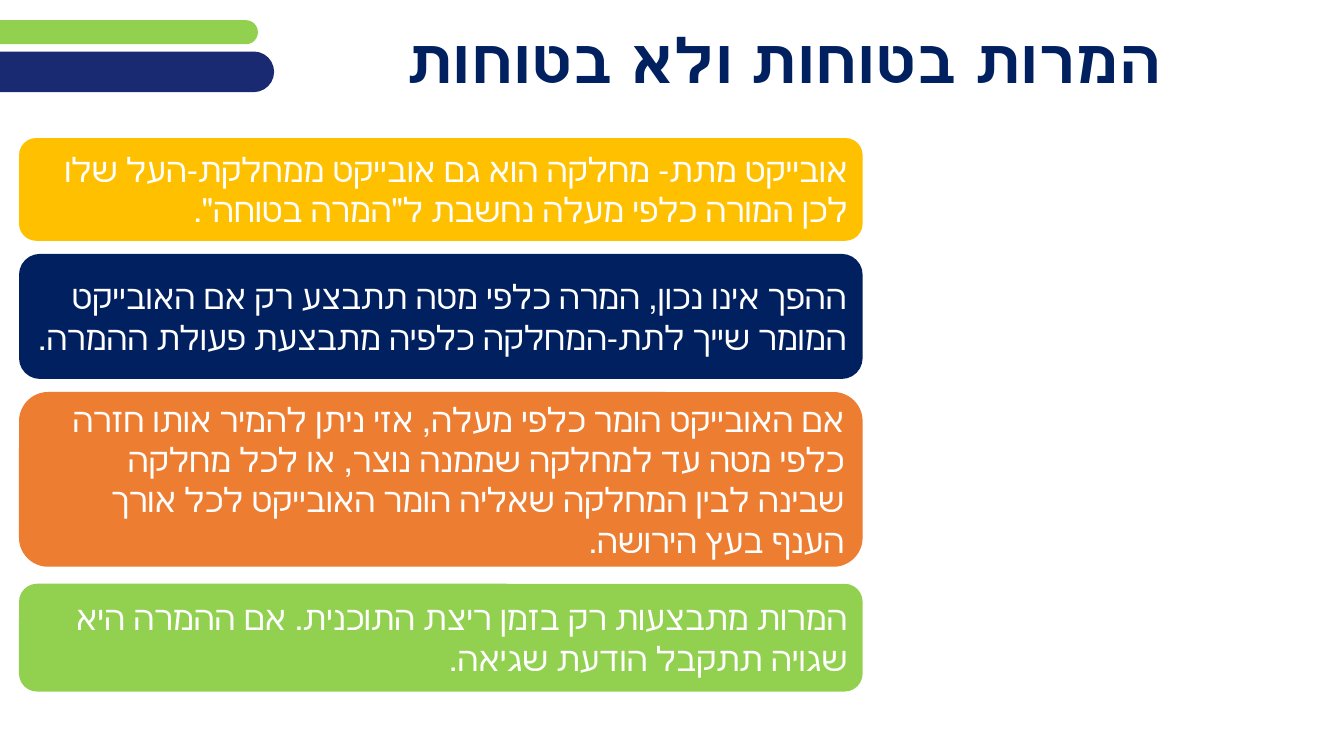
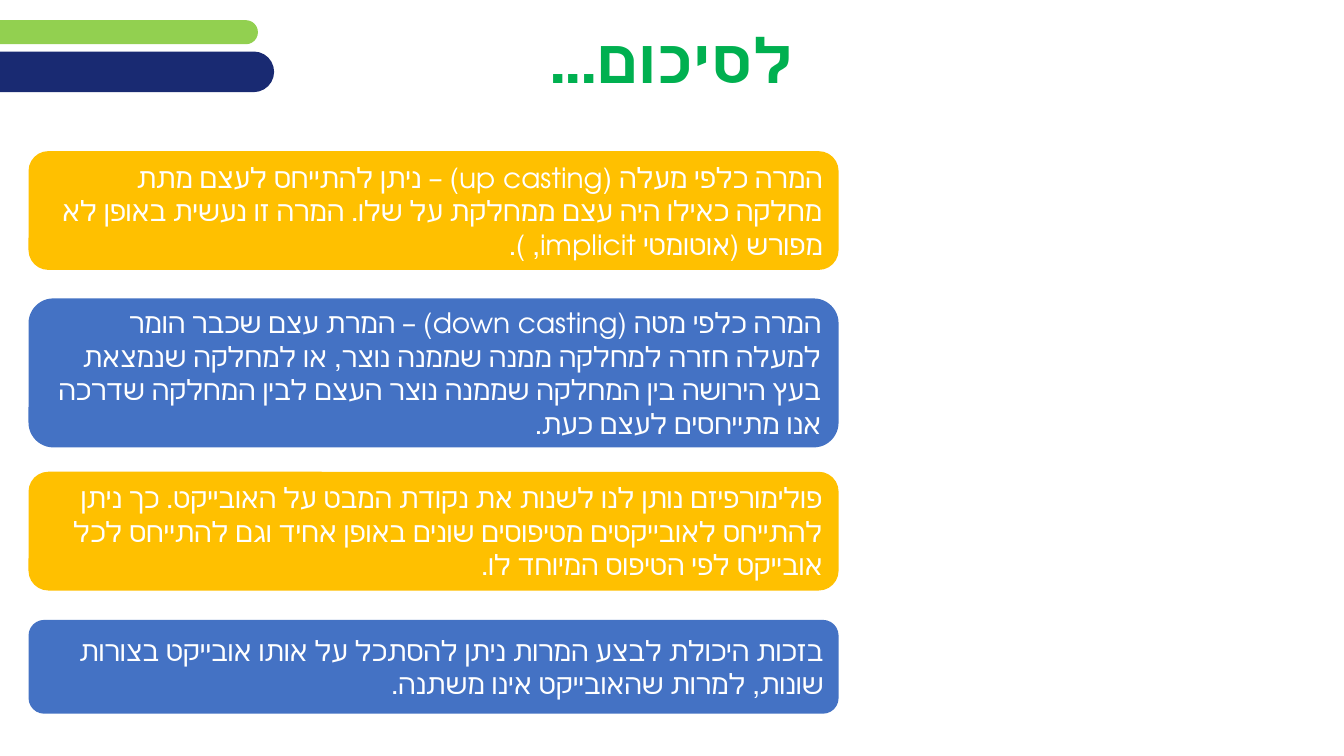
from dataclasses import dataclass

from pptx import Presentation
from pptx.dml.color import RGBColor
from pptx.enum import shapes, text
from pptx.util import Pt

FONT = "TeX Gyre Adventor"
WHITE, NAVY, INDIGO = "FFFFFF", "002060", "192A72"
LIME, GREEN, AMBER, ORANGE, BLUE = "92D050", "00B050", "FFC000", "ED7D31", "4472C4"
SLIDE_W, SLIDE_H = 960, 540
RIGHT, CENTER = text.PP_ALIGN.RIGHT, text.PP_ALIGN.CENTER
ROUND = shapes.MSO_SHAPE.ROUNDED_RECTANGLE
CARD = shapes.MSO_SHAPE.FLOWCHART_ALTERNATE_PROCESS


@dataclass
class Card:
    top: float
    height: float
    color: str
    text: str


@dataclass
class Page:
    title: str
    title_color: str
    title_align: text.PP_ALIGN
    title_indent: float
    card_left: float
    card_width: float
    card_size: float
    cards: list[Card]


PAGES = [
    Page("המרות בטוחות ולא בטוחות", NAVY, RIGHT, 130, 13.6, 602.6, 24, [
        Card(98.6, 73.4, AMBER, "אובייקט מתת- מחלקה הוא גם אובייקט ממחלקת-העל שלו לכן המורה "
             "כלפי מעלה נחשבת ל\"המרה בטוחה\"."),
        Card(181.4, 89.3, NAVY, "ההפך אינו נכון, המרה כלפי מטה תתבצע רק אם האובייקט המומר "
             "שייך לתת-המחלקה כלפיה מתבצעת פעולת ההמרה."),
        Card(280, 124.8, ORANGE, "אם האובייקט הומר כלפי מעלה, אזי ניתן להמיר אותו חזרה כלפי "
             "מטה עד למחלקה שממנה נוצר, או לכל מחלקה שבינה לבין המחלקה שאליה הומר "
             "האובייקט לכל אורך הענף בעץ הירושה."),
        Card(417, 77, LIME, "המרות מתבצעות רק בזמן ריצת התוכנית. אם ההמרה היא שגויה "
             "תתקבל הודעת שגיאה."),
    ]),
    Page("לסיכום...", GREEN, CENTER, 7.2, 20.4, 578.6, 20, [
        Card(108, 84.8, AMBER, "המרה כלפי מעלה (up casting) – ניתן להתייחס לעצם מתת מחלקה "
             "כאילו היה עצם ממחלקת על שלו. המרה זו נעשית באופן לא מפורש "
             "(אוטומטי implicit, )."),
        Card(213.2, 106.4, BLUE, "המרה כלפי מטה (down casting) – המרת עצם שכבר הומר למעלה "
             "חזרה למחלקה ממנה שממנה נוצר, או למחלקה שנמצאת בעץ הירושה בין המחלקה "
             "שממנה נוצר העצם לבין המחלקה שדרכה אנו מתייחסים לעצם כעת."),
        Card(337, 84.8, AMBER, "פולימורפיזם נותן לנו לשנות את נקודת המבט על האובייקט. כך "
             "ניתן להתייחס לאובייקטים מטיפוסים שונים באופן אחיד וגם להתייחס לכל "
             "אובייקט לפי הטיפוס המיוחד לו."),
        Card(442.8, 67, BLUE, "בזכות היכולת לבצע המרות ניתן להסתכל על אותו אובייקט בצורות "
             "שונות, למרות שהאובייקט אינו משתנה."),
    ]),
]


def rgb(color: str) -> RGBColor:
    return RGBColor.from_string(color)


def add_block(slide, kind, left: float, top: float, width: float, height: float, color: str):
    sp = slide.shapes.add_shape(kind, Pt(left), Pt(top), Pt(width), Pt(height))
    sp.shadow.inherit = False
    sp.fill.solid()
    sp.fill.fore_color.rgb = rgb(color)
    sp.line.fill.background()
    return sp


def write(sp, content: str, *, size: float, color: str, bold: bool = False,
          align: text.PP_ALIGN = RIGHT) -> None:
    """Set one right-to-left paragraph, vertically centred."""
    tf = sp.text_frame
    tf.word_wrap = True
    tf.vertical_anchor = text.MSO_ANCHOR.MIDDLE
    p = tf.paragraphs[0]
    p.alignment = align
    p._p.get_or_add_pPr().set("rtl", "1")
    r = p.add_run()
    r.text = content
    r.font.name, r.font.size, r.font.bold = FONT, Pt(size), bold
    r.font.color.rgb = rgb(color)
    r.font.language_id = text.MSO_AUTO_SIZE and None
    r._r.get_or_add_rPr().set("lang", "he-IL")


def add_bands(slide) -> None:
    for left, top, width, height, color in ((-20.2, 14.4, 204.5, 17.2, LIME),
                                            (-38.2, 36.8, 234, 29, INDIGO)):
        add_block(slide, ROUND, left, top, width, height, color).adjustments[0] = 0.5


def add_title(slide, page: Page) -> None:
    sp = slide.shapes.add_textbox(Pt(0), Pt(16.6), Pt(SLIDE_W), Pt(56.9))
    sp.text_frame.margin_right = Pt(page.title_indent)
    write(sp, page.title, size=44, color=page.title_color, bold=True, align=page.title_align)
    sp.text_frame.paragraphs[0].line_spacing = 0.9


def add_page(prs, page: Page) -> None:
    slide = prs.slides.add_slide(prs.slide_layouts[6])
    add_bands(slide)
    add_title(slide, page)
    for card in page.cards:
        sp = add_block(slide, CARD, page.card_left, card.top, page.card_width,
                       card.height, card.color)
        write(sp, card.text, size=page.card_size, color=WHITE)


def main() -> None:
    prs = Presentation()
    prs.slide_width, prs.slide_height = Pt(SLIDE_W), Pt(SLIDE_H)
    for page in PAGES:
        add_page(prs, page)
    prs.save("out.pptx")


if __name__ == "__main__":
    main()
